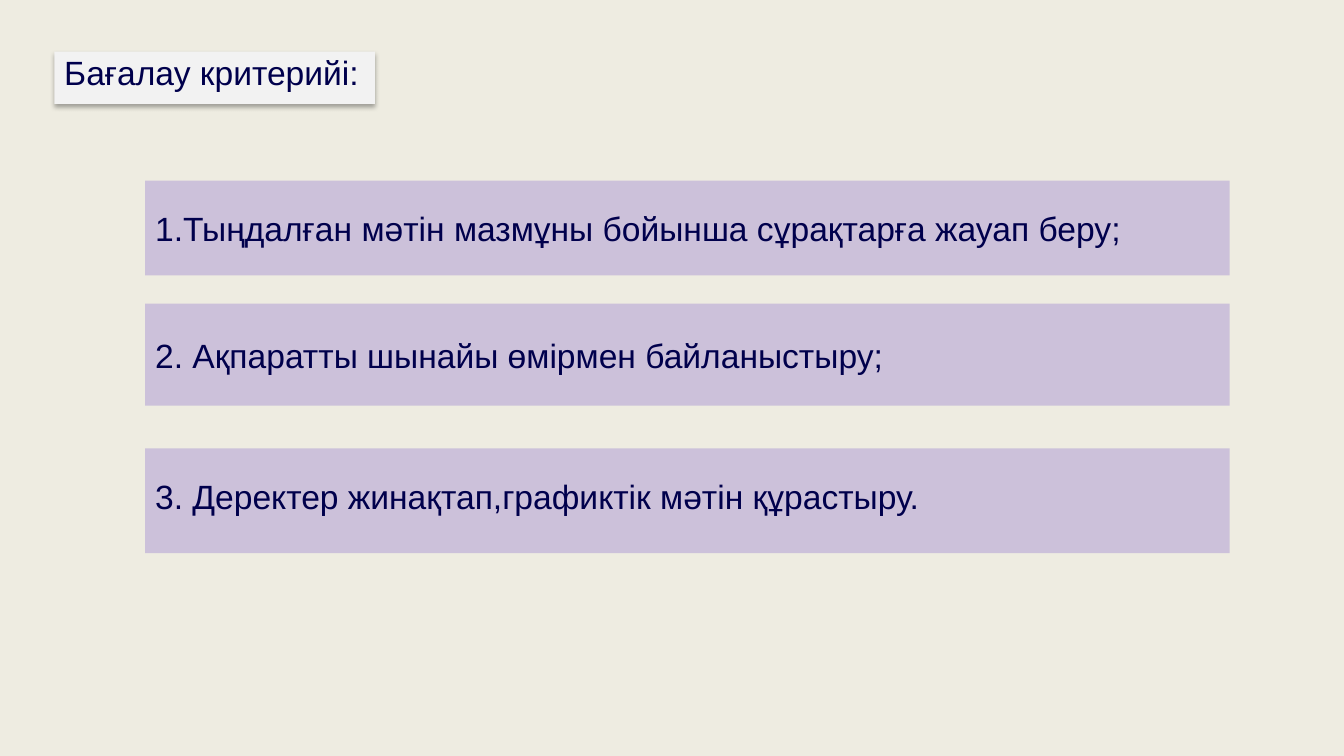
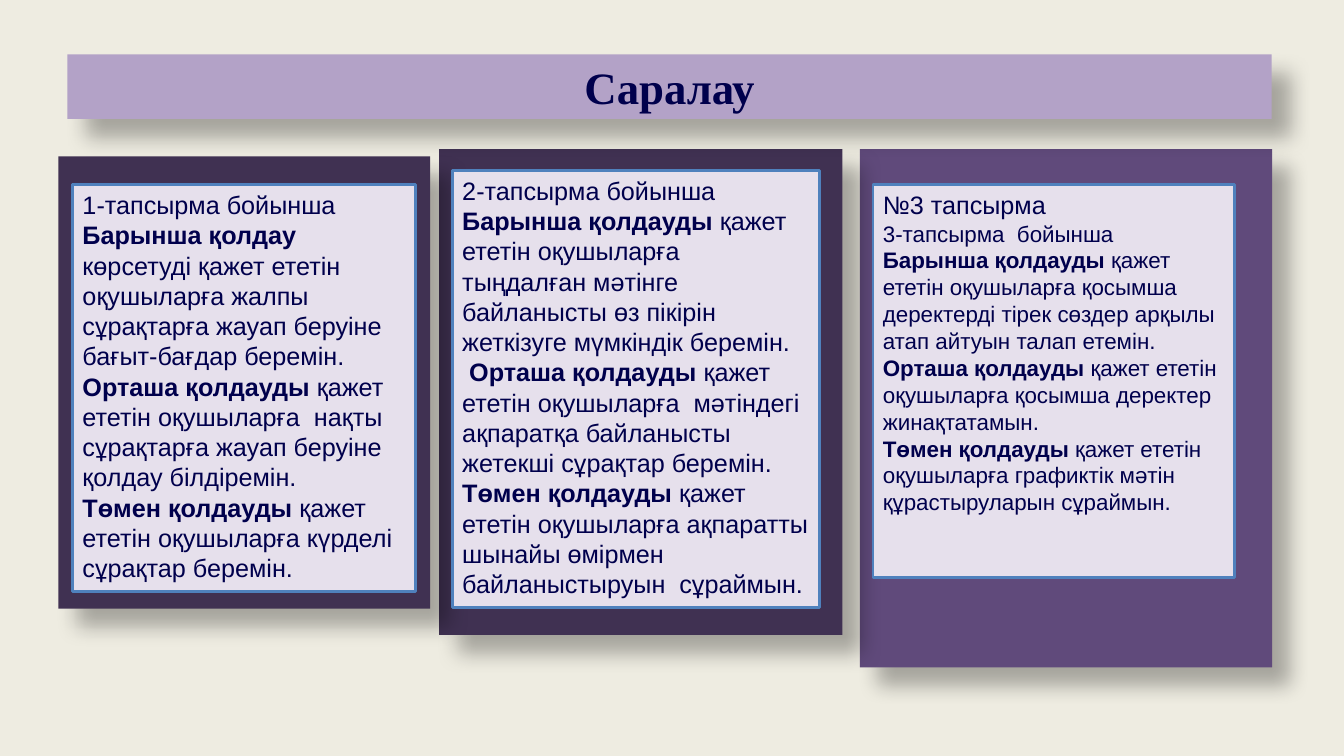
from dataclasses import dataclass
from typing import Optional

from lxml import etree
from pptx import Presentation
from pptx.dml.color import RGBColor
from pptx.enum import shapes, text
from pptx.oxml import ns
from pptx.util import Cm, Pt

# Shared colours and fonts
CREAM = RGBColor(0xEE, 0xEC, 0xE1)
NAVY = RGBColor(0x00, 0x00, 0x4C)
PALE_GREY = RGBColor(0xF2, 0xF2, 0xF2)
LILAC = RGBColor(0xCC, 0xC1, 0xDA)
MAUVE = RGBColor(0xB3, 0xA2, 0xC7)
PALE_LILAC = RGBColor(0xE6, 0xE0, 0xEC)
PURPLE = RGBColor(0x60, 0x4A, 0x7B)
DARK_PURPLE = RGBColor(0x40, 0x31, 0x52)
BLUE = RGBColor(0x4F, 0x81, 0xBD)
BODY_FONT = "Arial"
HEADING_FONT = "Times New Roman"


@dataclass(frozen=True)
class Area:
    """Left, top, width and height in centimetres."""
    left: float
    top: float
    width: float
    height: float


@dataclass(frozen=True)
class Shadow:
    blur: float
    distance: float
    angle: int
    opacity: int


@dataclass(frozen=True)
class Line:
    """A paragraph: an optional bold lead, then plain wording."""
    plain: str
    lead: str = ""
    size: float = 18


@dataclass(frozen=True)
class Criterion:
    area: Area
    wording: str
    top_inset: float


@dataclass(frozen=True)
class Task:
    frame: Area
    frame_color: RGBColor
    card: Area
    lines: tuple[Line, ...]


SOFT_SHADOW = Shadow(blur=3.5, distance=2.2, angle=90, opacity=32)
DEEP_SHADOW = Shadow(blur=15, distance=18, angle=45, opacity=30)

CRITERIA = (
    Criterion(Area(3.66, 4.55, 27.33, 2.39),
              "1.Тыңдалған мәтін мазмұны бойынша сұрақтарға жауап беру;", 0.7),
    Criterion(Area(3.66, 7.65, 27.33, 2.57),
              "2. Ақпаратты шынайы өмірмен байланыстыру;", 0.78),
    Criterion(Area(3.66, 11.3, 27.33, 2.64),
              "3. Деректер жинақтап,графиктік мәтін құрастыру.", 0.7),
)

TASKS = (
    Task(Area(1.47, 3.94, 9.37, 11.4), DARK_PURPLE, Area(1.83, 4.65, 8.64, 10.26), (
        Line("1-тапсырма бойынша"),
        Line("көрсетуді қажет ететін оқушыларға жалпы сұрақтарға жауап беруіне "
             "бағыт-бағдар беремін.", "Барынша қолдау "),
        Line("қажет ететін оқушыларға  нақты сұрақтарға жауап беруіне "
             "қолдау білдіремін.", "Орташа қолдауды "),
        Line("қажет ететін оқушыларға күрделі сұрақтар беремін.", "Төмен қолдауды "),
    )),
    Task(Area(11.07, 3.76, 10.16, 12.24), DARK_PURPLE, Area(11.4, 4.29, 9.25, 11.02), (
        Line("2-тапсырма бойынша"),
        Line("қажет ететін оқушыларға тыңдалған мәтінге байланысты өз пікірін "
             "жеткізуге мүмкіндік беремін.", "Барынша қолдауды "),
        Line("қажет ететін оқушыларға  мәтіндегі ақпаратқа байланысты "
             "жетекші сұрақтар беремін.", " Орташа қолдауды "),
        Line("қажет ететін оқушыларға ақпаратты шынайы өмірмен "
             "байланыстыруын  сұраймын.", "Төмен қолдауды "),
    )),
    Task(Area(21.67, 3.76, 10.39, 13.06), PURPLE, Area(22, 4.65, 9.12, 9.91), (
        Line("№3 тапсырма"),
        Line("3-тапсырма  бойынша", size=16),
        Line("қажет ететін оқушыларға қосымша деректерді тірек сөздер арқылы "
             "атап айтуын талап етемін.", "Барынша қолдауды ", 16),
        Line("қажет ететін оқушыларға қосымша деректер жинақтатамын.",
             "Орташа қолдауды ", 16),
        Line("қажет ететін оқушыларға графиктік мәтін құрастыруларын сұраймын.",
             "Төмен қолдауды ", 16),
    )),
)


def add_shadow(shape, shadow: Shadow) -> None:
    effects = shape._element.spPr.find(ns.qn("a:effectLst"))
    outer = etree.SubElement(
        effects, ns.qn("a:outerShdw"), blurRad=str(Pt(shadow.blur)),
        dist=str(Pt(shadow.distance)), dir=str(shadow.angle * 60000),
        algn="tl", rotWithShape="0")
    color = etree.SubElement(outer, ns.qn("a:srgbClr"), val="000000")
    etree.SubElement(color, ns.qn("a:alpha"), val=str(shadow.opacity * 1000))


def add_box(slide, area: Area, fill: RGBColor, shadow: Optional[Shadow] = None,
            outline: Optional[RGBColor] = None):
    shape = slide.shapes.add_shape(
        shapes.MSO_SHAPE.RECTANGLE, Cm(area.left), Cm(area.top),
        Cm(area.width), Cm(area.height))
    shape.fill.solid()
    shape.fill.fore_color.rgb = fill
    shape.shadow.inherit = False
    if shadow:
        add_shadow(shape, shadow)
    if outline:
        shape.line.color.rgb = outline
        shape.line.width = Pt(2)
    else:
        shape.line.fill.background()
    return shape


def write_lines(shape, lines: tuple[Line, ...], font: str = BODY_FONT,
                align=text.PP_ALIGN.LEFT) -> None:
    frame = shape.text_frame
    frame.word_wrap = True
    frame.vertical_anchor = text.MSO_ANCHOR.TOP
    for index, line in enumerate(lines):
        paragraph = frame.add_paragraph() if index else frame.paragraphs[0]
        paragraph.alignment = align
        for wording, bold in ((line.lead, True), (line.plain, False)):
            if wording:
                run = paragraph.add_run()
                run.text = wording
                run.font.name = font
                run.font.size = Pt(line.size)
                run.font.bold = bold
                run.font.color.rgb = NAVY


def add_slide(presentation):
    slide = presentation.slides.add_slide(presentation.slide_layouts[6])
    slide.background.fill.solid()
    slide.background.fill.fore_color.rgb = CREAM
    return slide


def build_criteria_slide(presentation) -> None:
    slide = add_slide(presentation)
    # Heading label
    heading = add_box(slide, Area(1.37, 1.3, 8.08, 1.32), PALE_GREY, SOFT_SHADOW)
    write_lines(heading, (Line("Бағалау критерийі:", size=24),))
    heading.text_frame.paragraphs[0].line_spacing = 0.9
    # Criteria bars
    for criterion in CRITERIA:
        bar = add_box(slide, criterion.area, LILAC)
        write_lines(bar, (Line(criterion.wording, size=24),))
        bar.text_frame.margin_top = Cm(criterion.top_inset)


def build_tasks_slide(presentation) -> None:
    slide = add_slide(presentation)
    # Frames, right to left so each shadow falls on its neighbour
    for task in reversed(TASKS):
        add_box(slide, task.frame, task.frame_color, DEEP_SHADOW)
    # Title banner
    banner = add_box(slide, Area(1.7, 1.37, 30.35, 1.63), MAUVE, DEEP_SHADOW)
    write_lines(banner, (Line("", "Саралау", 32),), HEADING_FONT,
                text.PP_ALIGN.CENTER)
    # Task cards
    for task in TASKS:
        card = add_box(slide, task.card, PALE_LILAC, outline=BLUE)
        write_lines(card, task.lines)


def main() -> None:
    presentation = Presentation()
    presentation.slide_width = Cm(33.87)
    presentation.slide_height = Cm(19.05)
    build_criteria_slide(presentation)
    build_tasks_slide(presentation)
    presentation.save("out.pptx")


if __name__ == "__main__":
    main()
